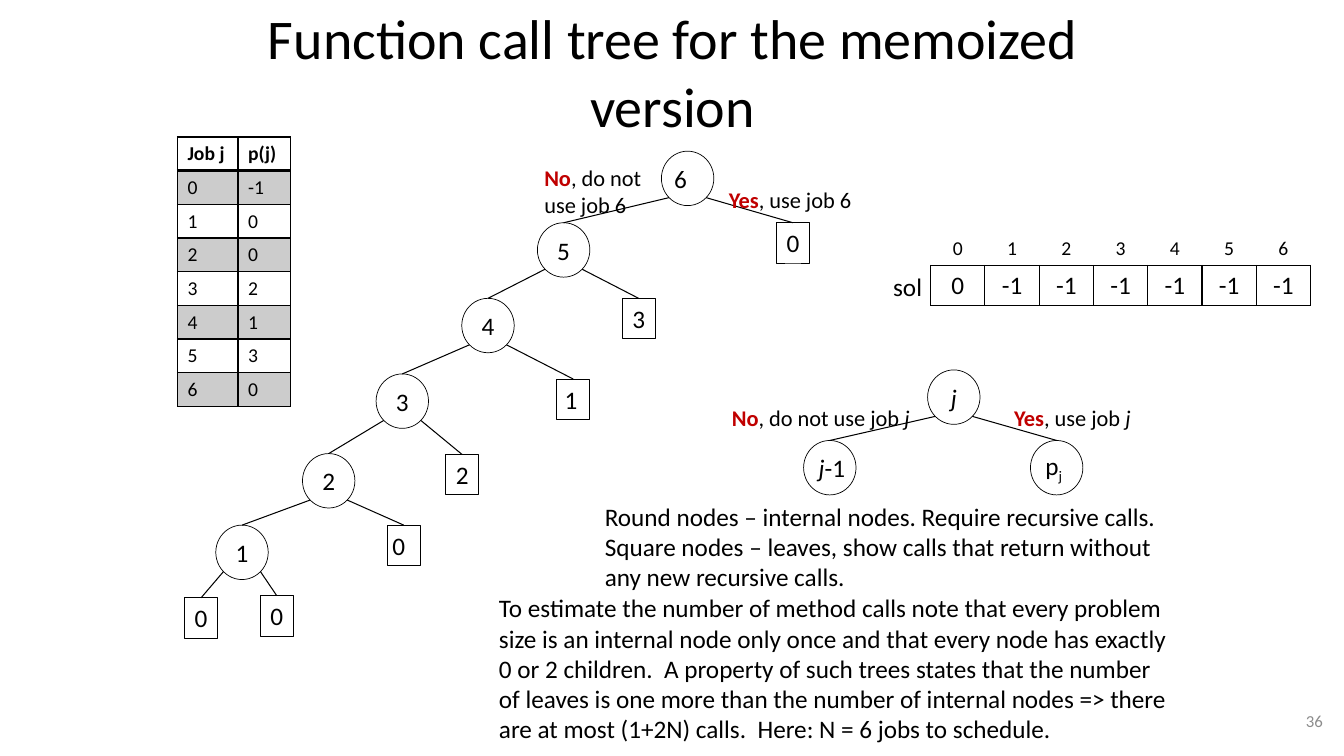
from collections import namedtuple

from lxml import etree
from pptx import Presentation
from pptx.dml.color import RGBColor
from pptx.enum.shapes import MSO_CONNECTOR, MSO_SHAPE
from pptx.enum.text import MSO_ANCHOR, PP_ALIGN
from pptx.oxml.ns import qn
from pptx.util import Inches, Pt

OVAL, RECTANGLE = MSO_SHAPE.OVAL, MSO_SHAPE.RECTANGLE
STRAIGHT = MSO_CONNECTOR.STRAIGHT
LEFT, CENTER, RIGHT = PP_ALIGN.LEFT, PP_ALIGN.CENTER, PP_ALIGN.RIGHT
TOP, MIDDLE = MSO_ANCHOR.TOP, MSO_ANCHOR.MIDDLE

COLORS = {"ink": "000000", "answer": "C00000", "band": "CCCCCC", "number": "8C8C8C"}
FONT = "Calibri"
CELL = Inches(0.1)  # the slide is a grid of 133.3 columns by 75 rows
CIRCLE = (5.2, 5.4)
SQUARE = (3.3, 4)
CORNER = 0.5 ** 0.5 / 2  # from a circle's centre to its diagonal points, as a share of its size

Box = namedtuple("Box", "left top width height")


def cells(*counts):
    return [round(count * CELL) for count in counts]


def color(name):
    return RGBColor.from_string(COLORS[name])


def format_run(run, size, name="ink", style=""):
    """Style holds any of the words answer, italic and subscript."""
    run.font.name = FONT
    run.font.size = Pt(size)
    run.font.bold = "answer" in style
    run.font.italic = "italic" in style
    run.font.color.rgb = color("answer" if "answer" in style else name)
    if "subscript" in style:
        run._r.get_or_add_rPr().set("baseline", "-25000")


def write(text_frame, paragraphs, size, align=LEFT, name="ink"):
    """Each paragraph is a string or a list of (text, style) pairs."""
    for index, content in enumerate(paragraphs):
        paragraph = text_frame.paragraphs[0] if index == 0 else text_frame.add_paragraph()
        paragraph.alignment = align
        for text, style in [(content, "")] if isinstance(content, str) else content:
            run = paragraph.add_run()
            run.text = text
            format_run(run, size, name, style)


def add_text(slide, box, paragraphs, size, align=LEFT, anchor=TOP, name="ink", wrap=True):
    text_frame = slide.shapes.add_textbox(*cells(*box)).text_frame
    text_frame.word_wrap = wrap
    text_frame.vertical_anchor = anchor
    write(text_frame, paragraphs, size, align, name)


def add_node(slide, preset, left, top, label, nudge=0):
    """Draws a node, its label moved sideways by nudge, and returns its box."""
    box = Box(left, top, *(CIRCLE if preset == OVAL else SQUARE))
    shape = slide.shapes.add_shape(preset, *cells(*box))
    shape.shadow.inherit = False
    shape.fill.background()
    shape.line.color.rgb = color("ink")
    shape.line.width = Pt(0.5)
    text_frame = shape.text_frame
    text_frame.word_wrap = False
    text_frame.vertical_anchor = MIDDLE
    text_frame.margin_top = text_frame.margin_bottom = 0
    text_frame.margin_left, text_frame.margin_right = cells(max(2 * nudge, 0), max(-2 * nudge, 0))
    write(text_frame, [label], 18, CENTER)
    return box


def add_edge(slide, parent, child, side):
    """Joins the top of child to the lower left (-1) or lower right (1) of parent."""
    start = (child.left + child.width / 2, child.top)
    end = (parent.left + parent.width * (0.5 + side * CORNER),
           parent.top + parent.height * (0.5 + CORNER))
    connector = slide.shapes.add_connector(STRAIGHT, *cells(*start, *end))
    connector.line.color.rgb = color("ink")
    connector.line.width = Pt(0.75)
    etree.SubElement(connector._element.spPr, qn("a:effectLst"))


def add_call_tree(slide, box):
    calls = [("6", 47.3, 0, -0.7), ("5", 35, 7.1, 0), ("4", 27.5, 14.6, 0),
             ("3", 19, 22.1, 0), ("2", 11.7, 30, 0), ("1", 3.1, 37.1, 0)]
    right_leaves = [("0", 58.7, 7.1, 0), ("3", 43.4, 14.6, 0), ("1", 36.9, 22.6, -0.2),
                    ("2", 25.9, 30.1, 0), ("0", 20.1, 37.1, -0.5), ("0", 7.5, 44.1, 0)]
    last_leaf = ("0", 0, 44.3, 0)

    def place(preset, node):
        label, left, top, nudge = node
        return add_node(slide, preset, box.left + left, box.top + top, label, nudge)

    circles = [place(OVAL, node) for node in calls]
    squares = [place(RECTANGLE, node) for node in right_leaves]
    left_children = circles[1:] + [place(RECTANGLE, last_leaf)]
    for parent, left_child, right_child in zip(circles, left_children, squares):
        add_edge(slide, parent, left_child, -1)
        add_edge(slide, parent, right_child, 1)
    add_text(slide, Box(box.left + 34.7, box.top + 0.8, 12.2, 6.4),
             [[("No", "answer"), (", do not", "")], "use job 6"], 16, wrap=False)
    add_text(slide, Box(box.left + 53, box.top + 3, 14.8, 3.7),
             [[("Yes", "answer"), (", use job 6", "")]], 16, wrap=False)


def add_general_step(slide, box):
    """Shows the two calls made for any job j."""
    root = add_node(slide, OVAL, box.left + 20.4, box.top, [("j", "italic")])
    without_job = add_node(slide, OVAL, box.left + 8.1, box.top + 7,
                           [("j", "italic"), ("-1", "")], 0.2)
    with_job = add_node(slide, OVAL, box.left + 30.6, box.top + 7,
                        [("p", ""), ("j", "subscript")], -0.3)
    add_edge(slide, root, without_job, -1)
    add_edge(slide, root, with_job, 1)
    for left, width, answer, rest in [(0, 19.8, "No", ", do not use job "),
                                      (28, 14.6, "Yes", ", use job ")]:
        add_text(slide, Box(box.left + left, box.top + 2.9, width, 3.7),
                 [[(answer, "answer"), (rest, ""), ("j", "italic")]], 16, wrap=False)


def set_borders(cell, widths):
    """Widths in points for left, right, top and bottom; 0 hides the line."""
    properties = cell._tc.get_or_add_tcPr()
    for position, (side, width) in enumerate(zip("LRTB", widths)):
        line = etree.Element(qn(f"a:ln{side}"), w=str(Pt(width)))
        if width:
            fill = etree.SubElement(line, qn("a:solidFill"))
            etree.SubElement(fill, qn("a:srgbClr"), val=COLORS["ink"])
        else:
            etree.SubElement(line, qn("a:noFill"))
        properties.insert(position, line)


def add_plain_table(slide, box, rows, column_widths, row_heights):
    table = slide.shapes.add_table(len(rows), len(rows[0]), *cells(*box)).table
    table.first_row = table.horz_banding = False
    for column, width in zip(table.columns, cells(*column_widths)):
        column.width = width
    for row, height in zip(table.rows, cells(*row_heights)):
        row.height = height
    for row, texts in zip(table.rows, rows):
        for cell, text in zip(row.cells, texts):
            cell.text_frame.text = text
            cell.fill.background()
    return table


def add_job_table(slide, box):
    rows = [("Job j", "p(j)")] + list(zip("0123456", ("-1", "0", "0", "2", "1", "3", "0")))
    table = add_plain_table(slide, box, rows, (6, 5.2), [box.height / len(rows)] * len(rows))
    for index, row in enumerate(table.rows):
        for cell in row.cells:
            run = cell.text_frame.paragraphs[0].runs[0]
            format_run(run, 14)
            run.font.bold = index == 0
            if index % 2:
                cell.fill.solid()
                cell.fill.fore_color.rgb = color("band")
            set_borders(cell, (1, 1, 2 if index == 1 else 1, 2 if index == 0 else 1))


def add_solution_array(slide, box):
    rows = [tuple("0123456"), ("0",) + ("-1",) * 6]
    table = add_plain_table(slide, box, rows, [box.width / 7] * 7, (3.3, 4))
    for row, size, borders in zip(table.rows, (14, 18), ((0, 0, 0, 1), (1, 1, 1, 1))):
        for cell in row.cells:
            paragraph = cell.text_frame.paragraphs[0]
            paragraph.alignment = CENTER
            format_run(paragraph.runs[0], size)
            set_borders(cell, borders)
    add_text(slide, Box(box.left - 4.7, box.top + 3.4, 5.5, 4), ["sol"], 18, wrap=False)


def add_explanations(slide, box):
    add_text(slide, Box(box.left + 10.5, box.top, 57.7, 10.1), [
        "Round nodes – internal nodes. Require recursive calls.",
        "Square nodes – leaves, show calls that return without any new recursive calls."], 18)
    add_text(slide, Box(box.left, box.top + 9.1, box.width, 16.2), [
        "To estimate the number of method calls note that every problem size is an internal node "
        "only once and that every node has exactly 0 or 2 children.  A property of such trees "
        "states that the number of leaves is one more than the number of internal nodes => there "
        "are at most (1+2N) calls.  Here: N = 6 jobs to schedule."], 18)


def main():
    presentation = Presentation()
    presentation.slide_width, presentation.slide_height = Inches(13.33), Inches(7.5)
    slide = presentation.slides.add_slide(presentation.slide_layouts[6])
    add_text(slide, Box(21.7, 0.8, 90, 12.5), ["Function call tree for the memoized version"],
             40, CENTER, MIDDLE)
    add_call_tree(slide, Box(18.3, 15, 67.8, 48.3))
    add_general_step(slide, Box(71.6, 36.7, 42.6, 12.4))
    add_job_table(slide, Box(17.6, 13.6, 11.2, 26.7))
    add_solution_array(slide, Box(92.3, 23, 37.7, 7.3))
    add_explanations(slide, Box(48.5, 49.2, 68.5, 25.3))
    add_text(slide, Box(101.1, 69.5, 31.1, 4), ["36"], 12, RIGHT, MIDDLE, "number")
    presentation.save("out.pptx")


if __name__ == "__main__":
    main()
